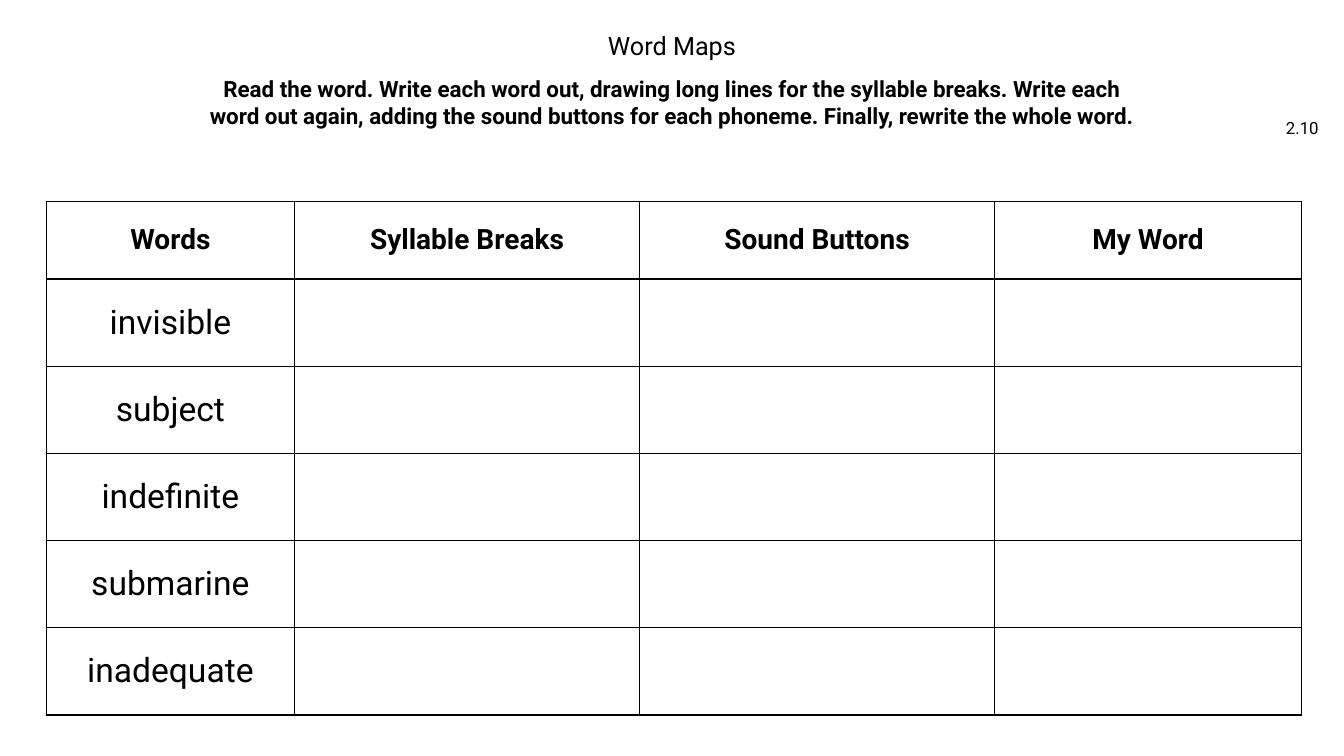
from dataclasses import dataclass

from lxml.etree import SubElement
from pptx import Presentation
from pptx.dml.color import RGBColor
from pptx.enum.text import MSO_ANCHOR as Anchor, MSO_AUTO_SIZE as AutoSize, PP_ALIGN as Align
from pptx.oxml.ns import qn
from pptx.util import Pt


@dataclass(frozen=True)
class Theme:
    font: str = "Roboto"
    ink: str = "000000"
    paper: str = "FFFFFF"
    code_size: int = 12
    instruction_size: int = 16
    title_size: int = 18
    header_size: int = 20
    word_size: int = 24
    border: int = 1


class Worksheet:
    """Draws the parts of a worksheet slide in one theme."""

    def __init__(self, deck, theme):
        self.theme = theme
        self.slide = deck.slides.add_slide(deck.slide_layouts[5])
        background = self.slide.background.fill
        background.solid()
        background.fore_color.rgb = RGBColor.from_string(theme.paper)

    def set_text(self, frame, text, size, bold=False, align=Align.CENTER):
        frame.text = text
        paragraph = frame.paragraphs[0]
        paragraph.alignment = align
        for run in paragraph.runs:
            run.font.name = self.theme.font
            run.font.size = Pt(size)
            run.font.bold = bold
            run.font.color.rgb = RGBColor.from_string(self.theme.ink)
        return paragraph

    def title(self, text, left, top, width, height):
        heading = self.slide.shapes.title
        heading.left, heading.top = Pt(left), Pt(top)
        heading.width, heading.height = Pt(width), Pt(height)
        frame = heading.text_frame
        frame.auto_size = AutoSize.NONE
        frame.vertical_anchor = Anchor.MIDDLE
        frame.margin_top = frame.margin_bottom = 0
        self.set_text(frame, text, self.theme.title_size).line_spacing = 0.9

    def text(self, text, left, top, width, height, size, bold=False, align=Align.CENTER, inset=7.2):
        box = self.slide.shapes.add_textbox(Pt(left), Pt(top), Pt(width), Pt(height))
        frame = box.text_frame
        frame.word_wrap = True
        frame.vertical_anchor = Anchor.MIDDLE
        frame.margin_left = frame.margin_right = Pt(inset)
        self.set_text(frame, text, size, bold, align)

    def outline(self, cell):
        properties = cell._tc.get_or_add_tcPr()
        for side in ("a:lnL", "a:lnR", "a:lnT", "a:lnB"):
            line = SubElement(properties, qn(side), w=str(Pt(self.theme.border)))
            fill = SubElement(line, qn("a:solidFill"))
            SubElement(fill, qn("a:srgbClr"), val=self.theme.ink)

    def table(self, headers, words, left, top, widths, header_height, word_height):
        heights = [header_height] + [word_height] * len(words)
        grid = self.slide.shapes.add_table(
            len(heights), len(headers), Pt(left), Pt(top), Pt(sum(widths)), Pt(sum(heights))
        ).table
        grid.first_row = grid.horz_banding = False
        for column, width in zip(grid.columns, widths):
            column.width = Pt(width)
        for row, height in zip(grid.rows, heights):
            row.height = Pt(height)
        for cell in grid.iter_cells():
            self.outline(cell)
            cell.fill.background()
            cell.vertical_anchor = Anchor.MIDDLE
        for column, header in enumerate(headers):
            self.set_text(grid.cell(0, column).text_frame, header, self.theme.header_size, bold=True)
        for row, word in enumerate(words, start=1):
            self.set_text(grid.cell(row, 0).text_frame, word, self.theme.word_size)


def main():
    deck = Presentation()
    deck.slide_width, deck.slide_height = Pt(960), Pt(540)
    theme = Theme()
    sheet = Worksheet(deck, theme)
    sheet.title("Word Maps", 275, 21, 410, 25)
    sheet.text("2.10", 903.6, 77, 45.4, 29, theme.code_size, align=Align.RIGHT)
    sheet.text(
        "Read the word. Write each word out, drawing long lines for the syllable breaks. "
        "Write each word out again, adding the sound buttons for each phoneme. "
        "Finally, rewrite the whole word.",
        141.5, 43.5, 677, 59, theme.instruction_size, bold=True, inset=4,
    )
    sheet.table(
        headers=["Words", "Syllable Breaks", "Sound Buttons", "My Word"],
        words=["invisible", "subject", "indefinite", "submarine", "inadequate"],
        left=33, top=143.8, widths=[177.5, 246.4, 253.6, 219.2],
        header_height=55.5, word_height=62.3,
    )
    deck.save("out.pptx")


if __name__ == "__main__":
    main()
